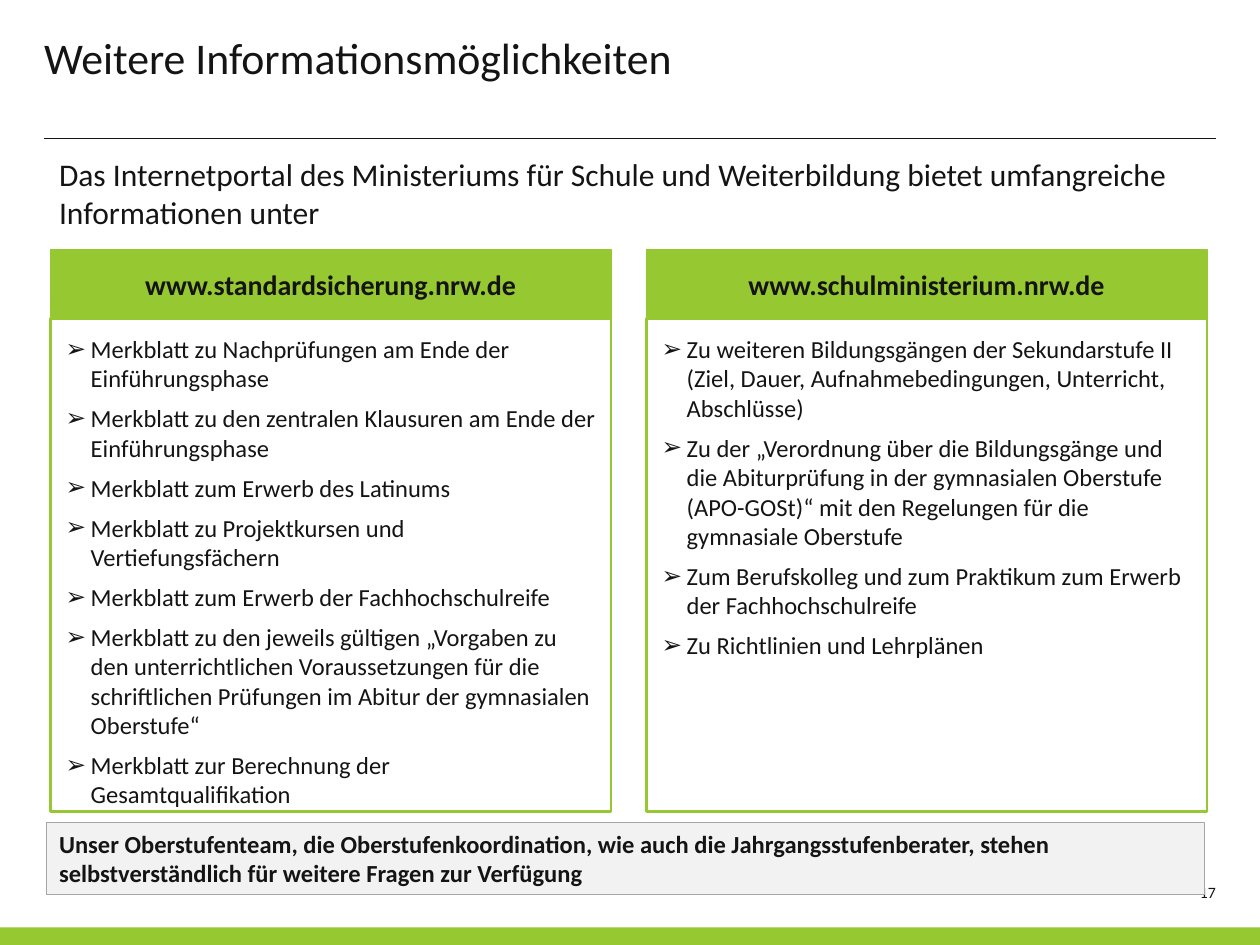
import pptx
import pptx.dml.color
import pptx.enum.shapes
import pptx.enum.text
import pptx.oxml.ns
import pptx.util
from lxml import etree
from pptx.util import Inches

Align = pptx.enum.text.PP_ALIGN
Anchor = pptx.enum.text.MSO_ANCHOR
Shapes = pptx.enum.shapes

INK, GREEN, WHITE = "141414", "96C832", "FFFFFF"
PALE, GREY = "F2F2F2", "A6A6A6"

COLUMNS = [
    ("www.standardsicherung.nrw.de", [
        "Merkblatt zu Nachprüfungen am Ende der Einführungsphase",
        "Merkblatt zu den zentralen Klausuren am Ende der Einführungsphase",
        "Merkblatt zum Erwerb des Latinums",
        "Merkblatt zu Projektkursen und Vertiefungsfächern",
        "Merkblatt zum Erwerb der Fachhochschulreife",
        "Merkblatt zu den jeweils gültigen „Vorgaben zu den unterrichtlichen "
        "Voraussetzungen für die schriftlichen Prüfungen im Abitur der "
        "gymnasialen Oberstufe“",
        "Merkblatt zur Berechnung der Gesamtqualifikation",
    ]),
    ("www.schulministerium.nrw.de", [
        "Zu weiteren Bildungsgängen der Sekundarstufe II (Ziel, Dauer, "
        "Aufnahmebedingungen, Unterricht, Abschlüsse)",
        "Zu der „Verordnung über die Bildungsgänge und die Abiturprüfung in der "
        "gymnasialen Oberstufe (APO-GOSt)“ mit den Regelungen für die "
        "gymnasiale Oberstufe",
        "Zum Berufskolleg und zum Praktikum zum Erwerb der Fachhochschulreife",
        "Zu Richtlinien und Lehrplänen",
    ]),
]


def color(value):
    return pptx.dml.color.RGBColor.from_string(value)


def place(shape, left, top, width, height):
    shape.left, shape.top = Inches(left), Inches(top)
    shape.width, shape.height = Inches(width), Inches(height)


def paint(shape, fill, line, line_width=0.75):
    shape.fill.solid()
    shape.fill.fore_color.rgb = color(fill)
    shape.line.color.rgb = color(line)
    shape.line.width = pptx.util.Pt(line_width)


def write(shape, text, size, bold=False, align=Align.LEFT,
          anchor=Anchor.TOP, margins=(0.1, 0.05)):
    frame = shape.text_frame
    frame.text = text
    frame.word_wrap = True
    frame.auto_size = pptx.enum.text.MSO_AUTO_SIZE.NONE
    frame.vertical_anchor = anchor
    frame.margin_left = frame.margin_right = Inches(margins[0])
    frame.margin_top = frame.margin_bottom = Inches(margins[1])
    for paragraph in frame.paragraphs:
        paragraph.alignment = align
        paragraph.space_before = pptx.util.Pt(0)
        for run in paragraph.runs:
            run.font.name = "Calibri"
            run.font.size = pptx.util.Pt(size)
            run.font.bold = bold
            run.font.color.rgb = color(INK)


def add_bullet(paragraph, character="➢", indent=0.2):
    paragraph.level = 1
    properties = paragraph._p.get_or_add_pPr()
    properties.set("marL", str(Inches(indent)))
    properties.set("indent", str(-Inches(indent)))
    bullet = etree.SubElement(properties, pptx.oxml.ns.qn("a:buChar"))
    bullet.set("char", character)


def add_rectangle(slide, box, fill, line):
    shape = slide.shapes.add_shape(
        Shapes.MSO_SHAPE.RECTANGLE, *[Inches(length) for length in box])
    shape.shadow.inherit = False
    paint(shape, fill, line)
    return shape


def add_text(slide, box, text, size, **options):
    shape = slide.shapes.add_textbox(*[Inches(length) for length in box])
    write(shape, text, size, **options)


def build_header(slide, left, top, width):
    title = slide.shapes.title
    place(title, left, top, 7.44, 0.87)
    write(title, "Weitere Informationsmöglichkeiten", 25, margins=(0, 0))

    # Rule below the title
    y = Inches(top + 0.86)
    rule = slide.shapes.add_connector(
        Shapes.MSO_CONNECTOR.STRAIGHT, Inches(left), y, Inches(left + width), y)
    rule.line.color.rgb = color(INK)
    rule.line.width = pptx.util.Pt(0.75)
    etree.SubElement(rule._element.spPr, pptx.oxml.ns.qn("a:effectLst"))


def build_column(heading, body, content, left, top, width, height):
    address, items = content
    heading_height = 0.55
    place(heading, left, top, width, heading_height)
    paint(heading, GREEN, GREEN)
    write(heading, address, 16, bold=True, align=Align.CENTER,
          anchor=Anchor.MIDDLE, margins=(0.12, 0.04))

    # List below the heading
    place(body, left, top + heading_height, width, height - heading_height)
    paint(body, WHITE, GREEN, 1.5)
    write(body, "\n".join(items), 14, margins=(0.12, 0.12))
    for index, paragraph in enumerate(body.text_frame.paragraphs):
        add_bullet(paragraph)
        paragraph.space_before = pptx.util.Pt(6 if index else 0)


def build_footer(slide, left, top, width):
    # Page number, partly covered by the note
    add_text(slide, (left + 9, top + 0.48, 0.28, 0.2), "17", 9,
             align=Align.RIGHT, margins=(0, 0))
    note = add_rectangle(slide, (left, top, width, 0.57), PALE, GREY)
    write(note, "Unser Oberstufenteam, die Oberstufenkoordination, wie auch die "
          "Jahrgangsstufenberater, stehen selbstverständlich für weitere Fragen "
          "zur Verfügung", 14, bold=True)
    # Band along the bottom edge
    add_rectangle(slide, (0, 7.36, 10, 0.14), GREEN, GREEN).line.fill.background()


def main():
    presentation = pptx.Presentation()
    presentation.slide_width, presentation.slide_height = Inches(10), Inches(7.5)
    comparison_layout = presentation.slide_layouts[4]
    slide = presentation.slides.add_slide(comparison_layout)
    for placeholder in list(slide.placeholders):
        if placeholder.placeholder_format.idx > 4:
            placeholder.element.getparent().remove(placeholder.element)

    build_header(slide, 0.35, 0.24, 9.3)
    add_text(slide, (0.37, 1.18, 9.31, 0.71),
             "Das Internetportal des Ministeriums für Schule und Weiterbildung "
             "bietet umfangreiche\nInformationen unter", 18)

    # Two columns, each a heading and a list
    parts = {part.placeholder_format.idx: part for part in slide.placeholders}
    for index, content in enumerate(COLUMNS):
        build_column(parts[1 + 2 * index], parts[2 + 2 * index], content,
                     0.4 + 4.73 * index, 1.98, 4.45, 4.46)

    build_footer(slide, 0.37, 6.53, 9.19)
    presentation.save("out.pptx")


if __name__ == "__main__":
    main()
